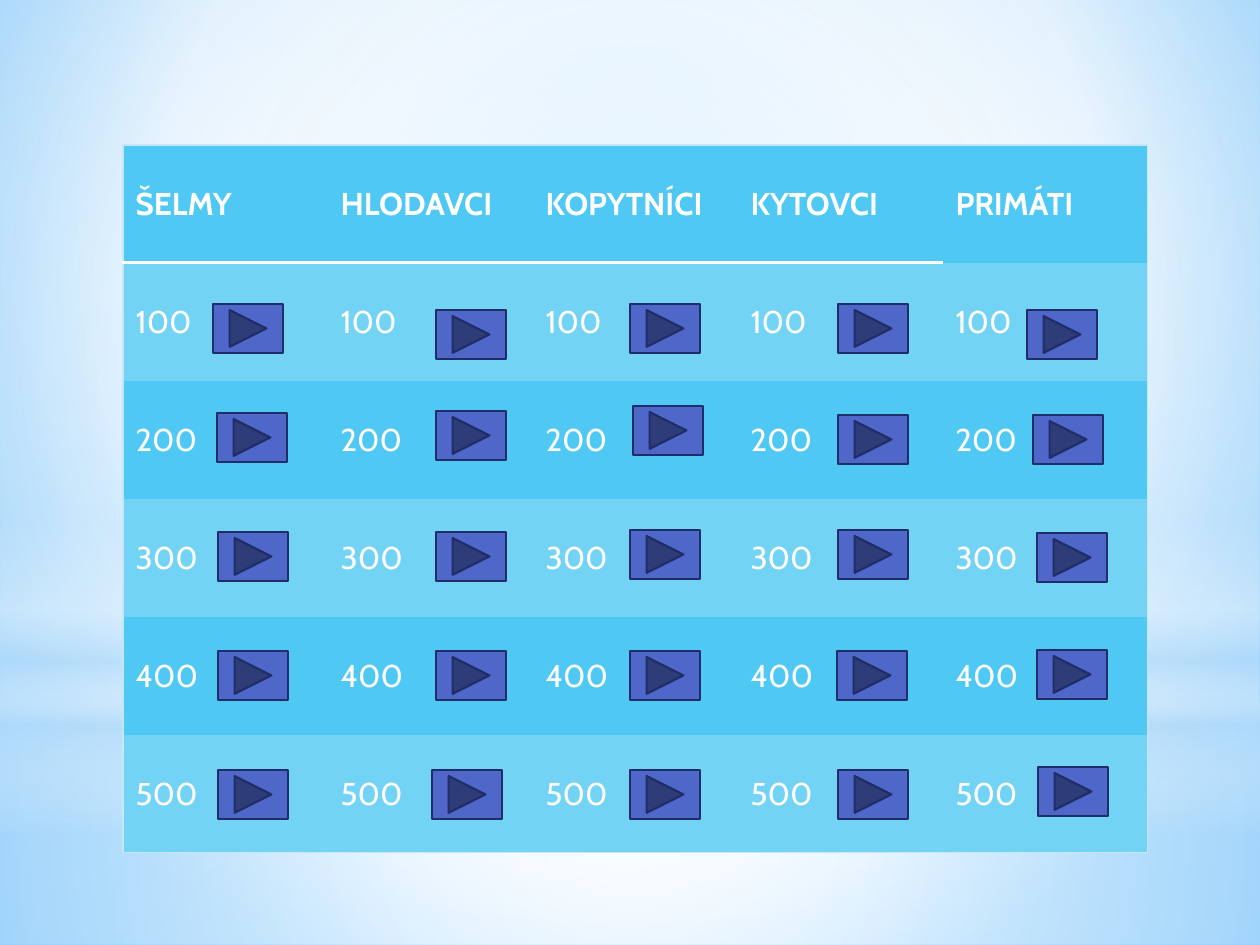
import pptx
import pptx.util
import pptx.dml.color
import pptx.enum.shapes
import pptx.enum.text
import pptx.oxml
import pptx.oxml.ns

SHAPE = pptx.enum.shapes.MSO_SHAPE
QN = pptx.oxml.ns.qn
NS = pptx.oxml.ns.nsdecls("a")
HEADS = ["ŠELMY", "HLODAVCI", "KOPYTNÍCI", "KYTOVCI", "PRIMÁTI"]
POINTS = ["100", "200", "300", "400", "500"]
SPOTS = [
    [(90, 41), (94, 32), (95, 33), (95, 34), (95, 35)],
    [(108, 47), (108, 30), (108, 33), (108, 34), (104, 35)],
    [(97, 41), (100, 25), (97, 31), (97, 34), (97, 35)],
    [(100, 41), (100, 34), (100, 31), (99, 34), (100, 35)],
    [(84, 47), (90, 34), (94, 34), (94, 33), (95, 32)],
]
MID = (50, 50, 50, 50)
LAYERS = [
    (SHAPE.RECTANGLE, (0, 703, 1260, 242), MID,
     [(0, "FFFFFF", 91), (37, "FFFFFF", 76), (100, "B4DCFA", 79)]),
    (SHAPE.RECTANGLE, (0, 0, 1260, 703), MID,
     [(0, "FFFFFF", 89), (48, "FFFFFF", 62), (100, "B4DCFA", 79)]),
    (SHAPE.RECTANGLE, (0, 519, 1260, 315), None,
     [(0, "FFFFFF", 0), (29, "FFFFFF", 30), (45, "B4DCFA", 40),
      (55, "FFFFFF", 26), (65, "B4DCFA", 60), (100, "FFFFFF", 0)]),
    (SHAPE.OVAL, (0, 220, 1260, 703), MID,
     [(0, "FFFFFF", 100), (56, "FFFFFF", 0)]),
]


def px(num):
    """Turn px into EMU."""
    return pptx.util.Emu(round(num * 914400 / 126))


def color(code):
    """Turn a hex string into a colour."""
    return pptx.dml.color.RGBColor.from_string(code)


def style(item, form):
    """Set each format value on an object."""
    for name, value in form.items():
        setattr(item, name, value)


def blend(props, stops, focus):
    """Swap the solid fill in props for a gradient around focus, or a vertical one."""
    marks = "".join(
        f'<a:gs pos="{pos * 1000}"><a:srgbClr val="{code}">'
        f'<a:alpha val="{alpha * 1000}"/></a:srgbClr></a:gs>'
        for pos, code, alpha in stops)
    way = '<a:lin ang="5400000" scaled="0"/>'
    if focus:
        sides = " ".join(f'{side}="{value * 1000}"' for side, value in zip("ltrb", focus))
        way = f'<a:path path="circle"><a:fillToRect {sides}/></a:path>'
    grad = pptx.oxml.parse_xml(
        f'<a:gradFill {NS} rotWithShape="1"><a:gsLst>{marks}</a:gsLst>{way}</a:gradFill>')
    props.replace(props.find(QN("a:solidFill")), grad)


def shape(slide, kind, box, fill):
    """Add a flat preset shape without a line."""
    item = slide.shapes.add_shape(kind, *map(px, box))
    item.shadow.inherit = False
    item.fill.solid()
    item.fill.fore_color.rgb = color(fill)
    item.line.fill.background()
    return item


def sky(slide):
    """Paint the background and its soft layers."""
    slide.background.fill.solid()
    props = next(slide._element.iter(QN("p:bgPr")))
    blend(props, [(0, "9ED5FF", 100), (60, "FFFFFF", 100), (100, "5BB9FF", 100)],
          (20, 10, 20, 60))
    for kind, box, focus, stops in LAYERS:
        item = shape(slide, kind, box, "FFFFFF")
        blend(item._element.spPr, stops, focus)


def edge(cell, side, code, width):
    """Add a border to one side of a cell."""
    cell._tc.get_or_add_tcPr().append(pptx.oxml.parse_xml(
        f'<a:ln{side} {NS} w="{round(width * 12700)}"><a:solidFill>'
        f'<a:srgbClr val="{code}"/></a:solidFill></a:ln{side}>'))


def borders(cell, row, col, last, end):
    """Draw the outer frame and the rule under the heads."""
    rim = ("C5E7F9", 0.75)
    sides = [("L", col == 0, rim), ("R", col == end, rim), ("T", row == 0, rim),
             ("B", row == last, rim), ("B", row == 0 and col < end, ("FFFFFF", 2))]
    for side, show, pen in sides:
        if show:
            edge(cell, side, *pen)


def grid(slide, box):
    """Place the table of topics and points in the box."""
    rows = [HEADS] + [[point] * len(HEADS) for point in POINTS]
    frame = slide.shapes.add_table(len(rows), len(HEADS), *map(px, box))
    table = frame.table
    style(table, {"first_row": False, "horz_banding": False})
    plain = next(table._tbl.iter(QN("a:tableStyleId")))
    plain.text = "{2D5ABB26-0587-4C30-8999-92F81FD0307C}"
    for row, words in enumerate(rows):
        for col, word in enumerate(words):
            cell = table.cell(row, col)
            borders(cell, row, col, len(rows) - 1, len(HEADS) - 1)
            cell.fill.solid()
            cell.fill.fore_color.rgb = color("72D3F5" if row % 2 else "4FC8F3")
            cell.vertical_anchor = pptx.enum.text.MSO_ANCHOR.MIDDLE
            run = cell.text_frame.paragraphs[0].add_run()
            run.text = word
            style(run.font, {"name": "Cabin", "size": pptx.util.Pt(18), "bold": row == 0})
            run.font.color.rgb = color("FFFFFF")


def buttons(slide, box):
    """Place one play button in each point cell of the box."""
    left, top, width, height = box
    wide, high = width // len(HEADS), height // (len(POINTS) + 1)
    for col, spots in enumerate(SPOTS):
        for row, (x, y) in enumerate(spots, 1):
            place = (left + col * wide + x, top + row * high + y, 70, 49)
            item = shape(slide, SHAPE.ACTION_BUTTON_FORWARD_OR_NEXT, place, "4E67C8")
            item.line.color.rgb = color("1F2E69")
            item.line.width = pptx.util.Pt(1.25)


def main():
    """Build and save the quiz board."""
    deck = pptx.Presentation()
    style(deck, {"slide_width": px(1260), "slide_height": px(945)})
    slide = deck.slides.add_slide(deck.slide_layouts[6])
    board = (123, 145, 1025, 708)
    sky(slide)
    grid(slide, board)
    buttons(slide, board)
    deck.save("out.pptx")


if __name__ == "__main__":
    main()
